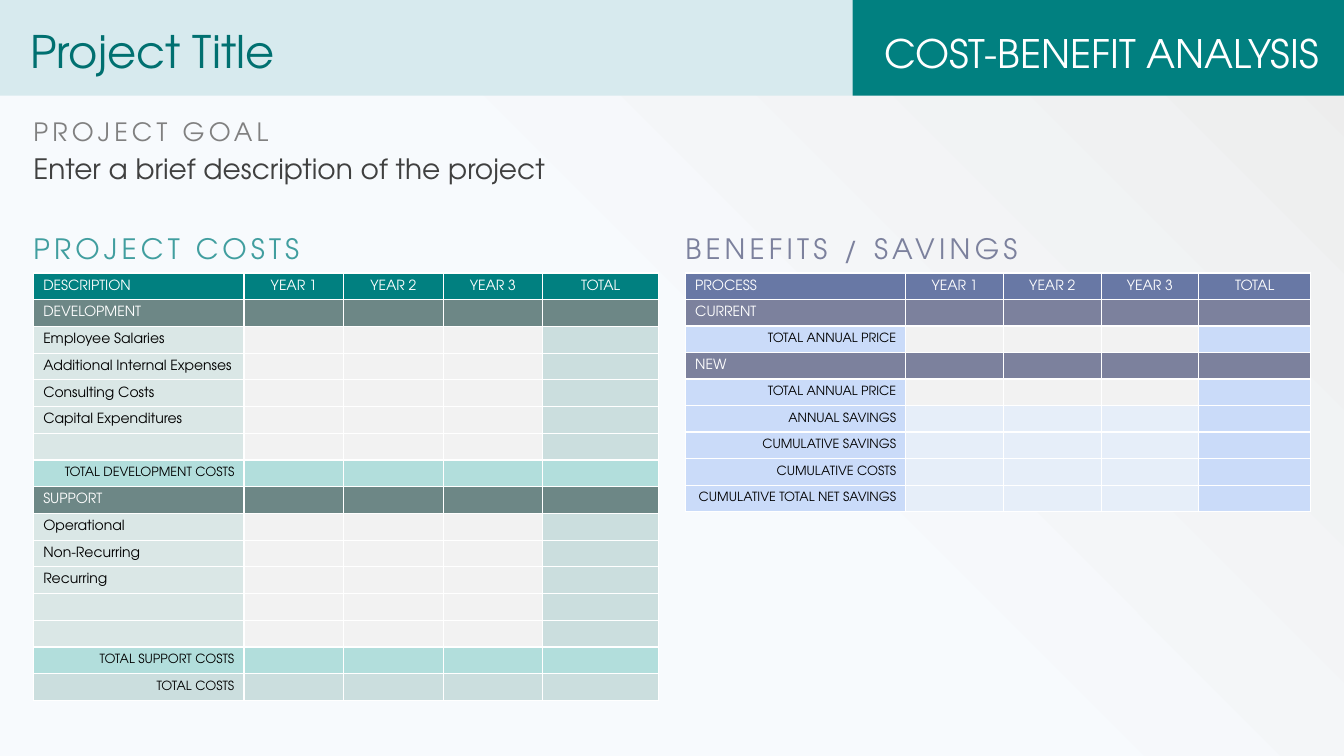
"""Builds a cost-benefit analysis slide with a costs table and a savings table."""
import dataclasses

import lxml.etree
import pptx
import pptx.dml.color
import pptx.enum.shapes
import pptx.enum.text
import pptx.oxml.ns
import pptx.util

Cm = pptx.util.Cm
Pt = pptx.util.Pt
RGB = pptx.dml.color.RGBColor.from_string
ALIGN = pptx.enum.text.PP_ALIGN
MIDDLE = pptx.enum.text.MSO_ANCHOR.MIDDLE
qn = pptx.oxml.ns.qn


@dataclasses.dataclass(frozen=True)
class RowStyle:
    label_fill: str
    year_fill: str
    total_fill: str
    size: int = 10
    color: str = "000000"
    align: ALIGN = ALIGN.LEFT


@dataclasses.dataclass(frozen=True)
class Theme:
    font: str = "TeX Gyre Adventor"
    title_size: int = 32
    banner_size: int = 28
    heading_size: int = 20
    label_size: int = 18
    white: str = "FFFFFF"
    title: str = "007070"
    title_fill: str = "D7EAEE"
    banner_fill: str = "018080"
    body: str = "404040"
    goal: str = "808080"
    costs: str = "419E9F"
    benefits: str = "7C819D"
    background: tuple = ((0.48, "F7FAFD"), (1.0, "EDEDED"))


def solid_row(fill, **options):
    return RowStyle(fill, fill, fill, **options)


COST_STYLES = {
    "header": solid_row("018080", color="FFFFFF"),
    "section": solid_row("6D8786", color="FFFFFF"),
    "item": RowStyle("DAE7E6", "F2F2F2", "CBDEDE"),
    "subtotal": solid_row("B2DEDC", size=9, align=ALIGN.RIGHT),
    "total": solid_row("CBDEDE", size=9, align=ALIGN.RIGHT),
}
BENEFIT_STYLES = {
    "header": solid_row("6878A5", color="FFFFFF"),
    "section": solid_row("7C819D", color="FFFFFF"),
    "price": RowStyle("CADBF9", "F2F2F2", "CADBF9", 9, align=ALIGN.RIGHT),
    "result": RowStyle("CADBF9", "E6EEF9", "CADBF9", 9, align=ALIGN.RIGHT),
}
COST_ROWS = [
    ("header", "DESCRIPTION"),
    ("section", "DEVELOPMENT"),
    ("item", "Employee Salaries"),
    ("item", "Additional Internal Expenses"),
    ("item", "Consulting Costs"),
    ("item", "Capital Expenditures"),
    ("item", ""),
    ("subtotal", "TOTAL DEVELOPMENT COSTS"),
    ("section", "SUPPORT"),
    ("item", "Operational"),
    ("item", "Non-Recurring"),
    ("item", "Recurring"),
    ("item", ""),
    ("item", ""),
    ("subtotal", "TOTAL SUPPORT COSTS"),
    ("total", "TOTAL COSTS"),
]
BENEFIT_ROWS = [
    ("header", "PROCESS"),
    ("section", "CURRENT"),
    ("price", "TOTAL ANNUAL PRICE"),
    ("section", "NEW"),
    ("price", "TOTAL ANNUAL PRICE"),
    ("result", "ANNUAL SAVINGS"),
    ("result", "CUMULATIVE SAVINGS"),
    ("result", "CUMULATIVE COSTS"),
    ("result", "CUMULATIVE TOTAL NET SAVINGS"),
]
COLUMN_HEADS = ["YEAR 1", "YEAR 2", "YEAR 3", "TOTAL"]


class SlideBuilder:
    def __init__(self, prs, theme):
        self.theme = theme
        self.slide = prs.slides.add_slide(prs.slide_layouts[5])

    def background(self):
        fill = self.slide.background.fill
        fill.gradient()
        fill.gradient_angle = 45
        for stop, (position, color) in zip(fill.gradient_stops, self.theme.background):
            stop.position = position
            stop.color.rgb = RGB(color)

    def set_text(self, tf, text, size, color, align=ALIGN.LEFT, spacing=0):
        p = tf.paragraphs[0]
        p.text = text
        p.alignment = align
        for r in p.runs:
            r.font.name = self.theme.font
            r.font.size = Pt(size)
            r.font.color.rgb = RGB(color)
            if spacing:
                r._r.get_or_add_rPr().set("spc", str(spacing * 100))
        if not text:
            end = lxml.etree.SubElement(p._p, qn("a:endParaRPr"))
            end.set("sz", str(size * 100))

    def frame(self, tf, insets):
        tf.word_wrap = True
        tf.auto_size = pptx.enum.text.MSO_AUTO_SIZE.NONE
        tf.margin_left, tf.margin_top, tf.margin_right, tf.margin_bottom = map(Cm, insets)

    def title(self, text, width, height):
        sp = self.slide.shapes.title
        sp.left, sp.top, sp.width, sp.height = Cm(0), Cm(0), Cm(width), Cm(height)
        sp.fill.solid()
        sp.fill.fore_color.rgb = RGB(self.theme.title_fill)
        self.frame(sp.text_frame, (0.76, 0.25, 0.51, 0.13))
        sp.text_frame.vertical_anchor = MIDDLE
        self.set_text(sp.text_frame, text, self.theme.title_size, self.theme.title)

    def banner(self, text, left, width, height):
        sp = self.slide.shapes.add_shape(
            pptx.enum.shapes.MSO_SHAPE.RECTANGLE, Cm(left), Cm(0), Cm(width), Cm(height))
        sp.shadow.inherit = False
        sp.fill.solid()
        sp.fill.fore_color.rgb = RGB(self.theme.banner_fill)
        sp.line.fill.background()
        self.frame(sp.text_frame, (0, 0.25, 0.64, 0))
        sp.text_frame.vertical_anchor = MIDDLE
        self.set_text(sp.text_frame, text, self.theme.banner_size, self.theme.white, ALIGN.RIGHT)

    def text(self, text, left, top, width, height, size, color, spacing=0):
        sp = self.slide.shapes.add_textbox(Cm(left), Cm(top), Cm(width), Cm(height))
        self.frame(sp.text_frame, (0, 0, 0, 0))
        self.set_text(sp.text_frame, text, size, color, spacing=spacing)

    def cell(self, cell, text, fill, style, align):
        cell.margin_left = cell.margin_right = Cm(0.25)
        cell.margin_top = cell.margin_bottom = 0
        cell.vertical_anchor = MIDDLE
        tcPr = cell._tc.get_or_add_tcPr()
        for side in ("lnL", "lnR", "lnT", "lnB"):
            ln = lxml.etree.SubElement(tcPr, qn(f"a:{side}"), w=str(Pt(1)))
            paint = lxml.etree.SubElement(ln, qn("a:solidFill"))
            lxml.etree.SubElement(paint, qn("a:srgbClr"), val=self.theme.white)
        cell.fill.solid()
        cell.fill.fore_color.rgb = RGB(fill)
        self.set_text(cell.text_frame, text, style.size, style.color, align)

    def table(self, rows, styles, left, top, height, widths):
        table = self.slide.shapes.add_table(
            len(rows), len(widths), Cm(left), Cm(top), Cm(sum(widths)), Cm(height)).table
        table.first_row = table.horz_banding = False
        for column, width in zip(table.columns, widths):
            column.width = Cm(width)
        for i, (kind, label) in enumerate(rows):
            table.rows[i].height = Cm(height / len(rows))
            style = styles[kind]
            heads = COLUMN_HEADS if kind == "header" else [""] * len(COLUMN_HEADS)
            fills = [style.label_fill] + [style.year_fill] * 3 + [style.total_fill]
            for j, (text, fill) in enumerate(zip([label] + heads, fills)):
                align = ALIGN.CENTER if j else style.align
                self.cell(table.cell(i, j), text, fill, style, align)


def main():
    prs = pptx.Presentation()
    prs.slide_width, prs.slide_height = Cm(33.87), Cm(19.05)
    theme = Theme()
    s = SlideBuilder(prs, theme)
    left, right = 0.84, 17.27
    s.background()
    s.title("Project Title", 21.49, 2.41)
    s.banner("COST-BENEFIT ANALYSIS", 21.49, 12.38, 2.41)
    s.text("PROJECT GOAL", left, 2.92, 10.2, 0.89, theme.label_size, theme.goal, 3)
    s.text("Enter a brief description of the project", left, 3.81, 29.85, 1.57,
           theme.heading_size, theme.body)
    s.text("PROJECT COSTS", left, 5.84, 11.68, 1.02, theme.heading_size, theme.costs, 3)
    s.text("BENEFITS / SAVINGS", right, 5.84, 12.67, 1.02, theme.heading_size, theme.benefits, 3)
    s.table(COST_ROWS, COST_STYLES, left, 6.88, 10.77, [5.31, 2.51, 2.51, 2.51, 2.92])
    s.table(BENEFIT_ROWS, BENEFIT_STYLES, right, 6.88, 6.02, [5.56, 2.46, 2.46, 2.46, 2.82])
    prs.save("out.pptx")


if __name__ == "__main__":
    main()
